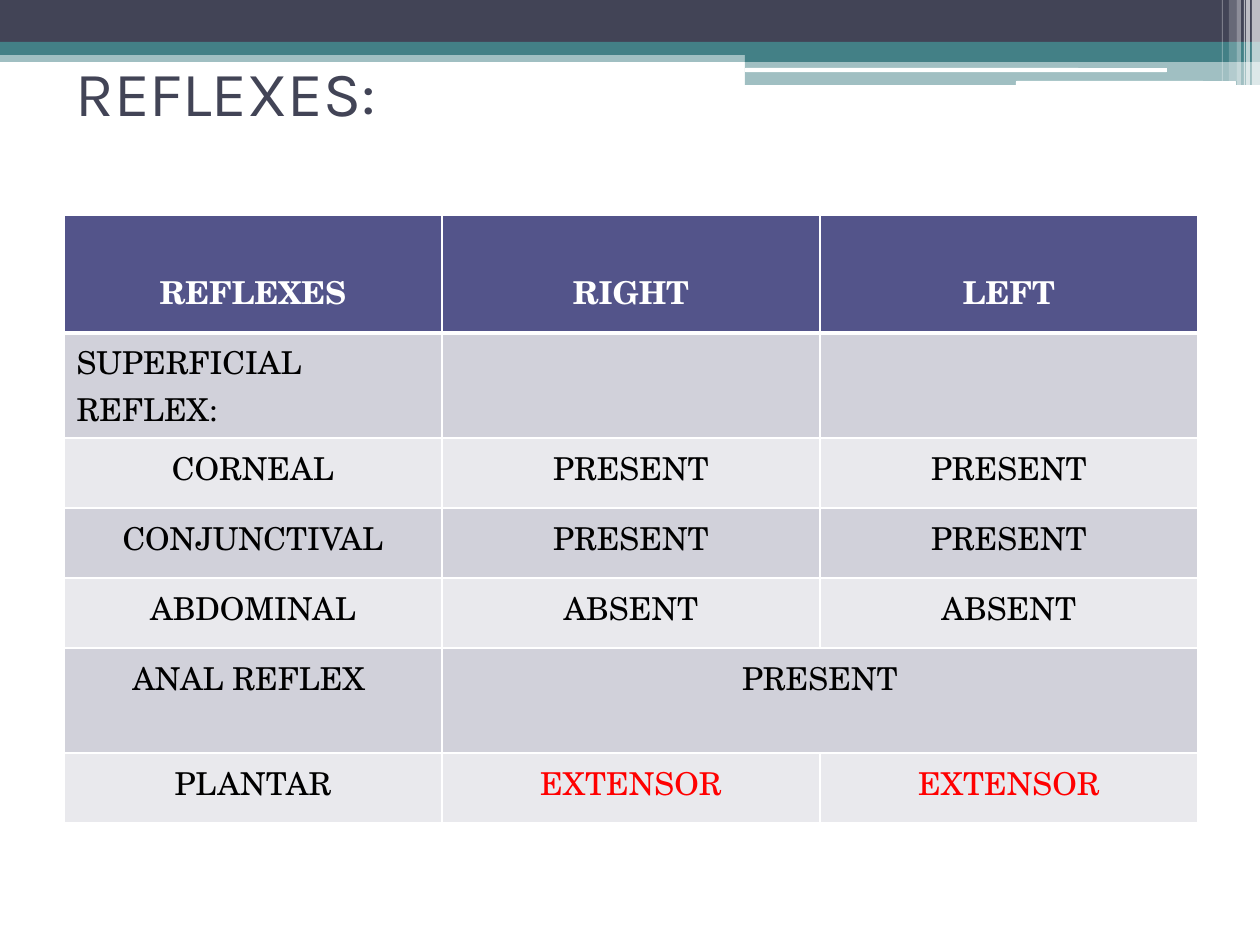
from lxml.etree import SubElement
from pptx import Presentation
from pptx.dml.color import RGBColor
from pptx.enum.shapes import MSO_SHAPE
from pptx.enum.text import MSO_ANCHOR, PP_ALIGN
from pptx.oxml.ns import qn
from pptx.util import Pt

PX = 914400 // 126
NAVY, TEAL, WHITE = "424456", "438086", "FFFFFF"
HEADER, BAND_DARK, BAND_LIGHT = "53548A", "D1D1DA", "E9E9ED"
BLACK, RED = "000000", "FF0000"

# left, top, width, height, colour, opacity in percent
BANDS = [
    (0, 50, 1260, 12, TEAL, 50),
    (0, 0, 1260, 42, NAVY, 100),
    (0, 42, 1260, 13, TEAL, 100),
    (745, 49, 515, 13, TEAL, 100),
    (745, 61, 515, 24, TEAL, 50),
]
WHITE_LINES = [(745, 68, 422, 4), (1016, 81, 220, 5)]
# left, width, height, opacity in percent
STRIPES = [(1252, 8, 86, 65), (1246, 4, 86, 65), (1244, 1, 86, 60),
           (1237, 4, 86, 40), (1229, 8, 81, 20), (1222, 1, 81, 30)]

ROWS = [
    ("REFLEXES", "RIGHT", "LEFT"),
    ("SUPERFICIAL REFLEX:", "", ""),
    ("CORNEAL", "PRESENT", "PRESENT"),
    ("CONJUNCTIVAL", "PRESENT", "PRESENT"),
    ("ABDOMINAL", "ABSENT", "ABSENT"),
    ("ANAL REFLEX ", "PRESENT", ""),
    ("PLANTAR", "EXTENSOR", "EXTENSOR"),
]
ROW_HEIGHTS = [118, 105, 70, 70, 70, 105, 70]
ANAL_ROW = 5


def rgb(value):
    return RGBColor.from_string(value)


def px(*lengths):
    return [length * PX for length in lengths]


def add_block(slide, box, color, opacity=100, preset=MSO_SHAPE.RECTANGLE):
    block = slide.shapes.add_shape(preset, *px(*box))
    block.shadow.inherit = False
    block.line.fill.background()
    block.fill.solid()
    block.fill.fore_color.rgb = rgb(color)
    if opacity < 100:
        srgb = block.fill._xPr.find(".//" + qn("a:srgbClr"))
        SubElement(srgb, qn("a:alpha"), val=str(opacity * 1000))


def add_banner(slide, left, top):
    for x, y, width, height, color, opacity in BANDS:
        add_block(slide, (left + x, top + y, width, height), color, opacity)
    for x, y, width, height in WHITE_LINES:
        add_block(slide, (left + x, top + y, width, height), WHITE,
                  preset=MSO_SHAPE.ROUNDED_RECTANGLE)
    for x, width, height, opacity in STRIPES:
        add_block(slide, (left + x, top, width, height), WHITE, opacity)


def set_title(slide, left, top, width, height):
    title = slide.shapes.title
    title.left, title.top, title.width, title.height = px(left, top, width, height)
    title.text_frame.text = "REFLEXES:"
    title.text_frame.vertical_anchor = MSO_ANCHOR.MIDDLE
    heading = title.text_frame.paragraphs[0]
    heading.alignment = PP_ALIGN.LEFT
    heading.font.name = "Karla"
    heading.font.size = Pt(36)
    heading.font.color.rgb = rgb(NAVY)


def set_borders(cell, widths):
    properties = cell._tc.get_or_add_tcPr()
    for side, width in widths.items():
        line = SubElement(properties, qn("a:ln" + side), w=str(Pt(width)))
        fill = SubElement(line, qn("a:solidFill"))
        SubElement(fill, qn("a:srgbClr"), val=WHITE)


def format_cell(cell, text, row):
    header = row == 0
    # Borders come before the fill in the cell properties
    set_borders(cell, {"L": 1, "R": 1, "T": 3 if row == 1 else 1,
                       "B": 3 if header else 1})
    cell.fill.solid()
    cell.fill.fore_color.rgb = rgb(
        HEADER if header else BAND_DARK if row % 2 else BAND_LIGHT)
    if header:
        cell.margin_top = 53 * PX
    cell.text = text
    label = cell.text_frame.paragraphs[0]
    label.alignment = PP_ALIGN.LEFT if row == 1 else PP_ALIGN.CENTER
    label.font.name = "TeX Gyre Schola"
    label.font.size = Pt(18)
    label.font.bold = header
    label.font.color.rgb = rgb(
        WHITE if header else RED if text == "EXTENSOR" else BLACK)


def add_reflex_table(slide, left, top, width):
    columns = len(ROWS[0])
    table = slide.shapes.add_table(
        len(ROWS), columns, *px(left, top, width, sum(ROW_HEIGHTS))).table
    for column in table.columns:
        column.width = width * PX // columns
    for row, (texts, height) in enumerate(zip(ROWS, ROW_HEIGHTS)):
        table.rows[row].height = height * PX
        for column, text in enumerate(texts):
            format_cell(table.cell(row, column), text, row)
    # One result covers both sides
    table.cell(ANAL_ROW, 1).merge(table.cell(ANAL_ROW, 2))


def main():
    deck = Presentation()
    deck.slide_width, deck.slide_height = px(1260, 945)
    slide = deck.slides.add_slide(deck.slide_layouts[5])
    add_banner(slide, 0, 0)
    set_title(slide, 63, 38, 349, 107)
    add_reflex_table(slide, 64, 215, 1134)
    deck.save("out.pptx")


if __name__ == "__main__":
    main()
